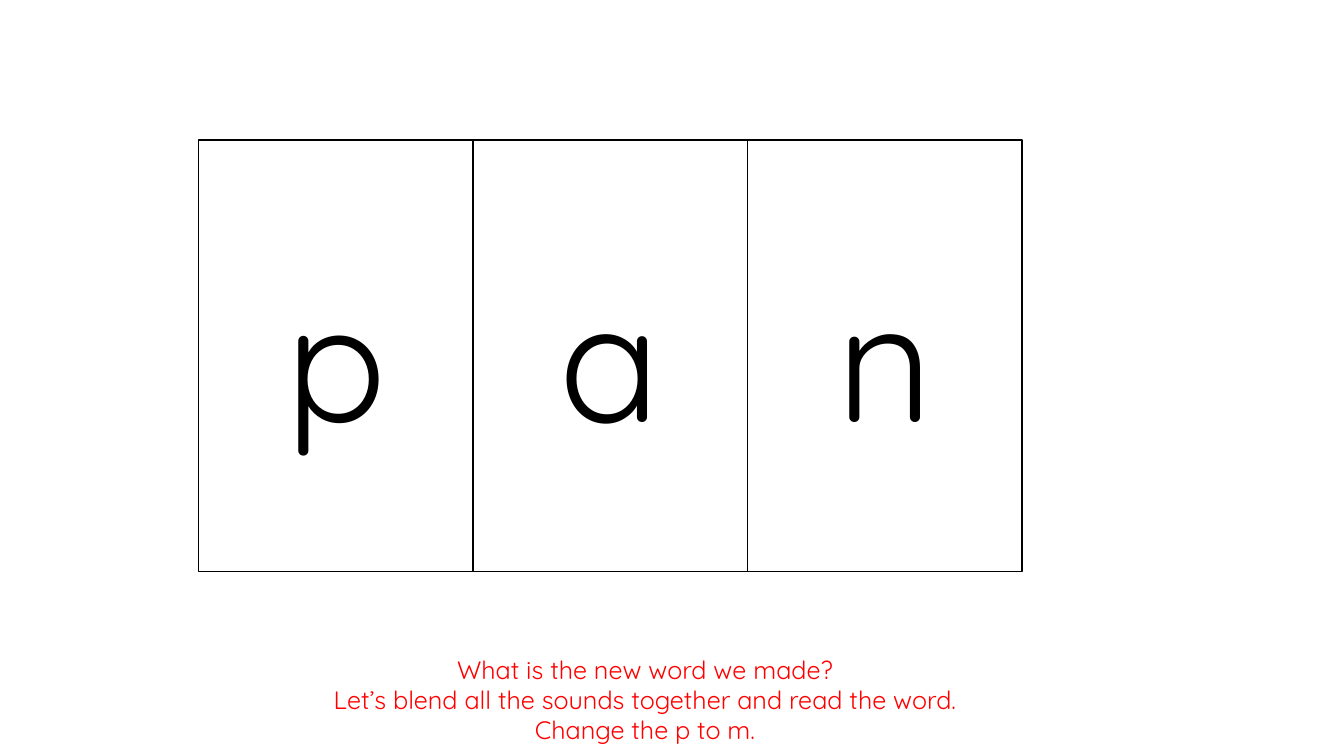
from pptx import Presentation
from pptx.dml.color import RGBColor
from pptx.enum.shapes import MSO_SHAPE
from pptx.enum.text import MSO_ANCHOR, MSO_AUTO_SIZE, PP_ALIGN
from pptx.util import Cm, Pt

COLORS = {"card": "FFFFFF", "ink": "000000", "prompt": "FF0000"}
FONT = "Quicksand"


def add_line(para, text, size, color):
    para.alignment = PP_ALIGN.CENTER
    span = para.add_run()
    span.text = text
    span.font.name = FONT
    span.font.size = Pt(size)
    span.font.color.rgb = RGBColor.from_string(COLORS[color])


deck = Presentation()
deck.slide_width, deck.slide_height = Cm(33.87), Cm(19.05)
page = deck.slides.add_slide(deck.slide_layouts[6])

# Letter cards, side by side
card_left, card_top, card_width, card_height = 5, 3.53, 6.92, 10.87
for index, letter in enumerate("pan"):
    card = page.shapes.add_shape(
        MSO_SHAPE.RECTANGLE,
        Cm(card_left + index * card_width), Cm(card_top),
        Cm(card_width), Cm(card_height),
    )
    card.shadow.inherit = False
    card.fill.solid()
    card.fill.fore_color.rgb = RGBColor.from_string(COLORS["card"])
    card.line.color.rgb = RGBColor.from_string(COLORS["ink"])
    card.line.width = Pt(1)
    card.text_frame.vertical_anchor = MSO_ANCHOR.MIDDLE
    add_line(card.text_frame.paragraphs[0], letter, 120, "ink")

# Teacher prompts
prompts = [
    "What is the new word we made?",
    "Let’s blend all the sounds together and read the word.",
    "Change the p to m.",
]
box = page.shapes.add_textbox(Cm(2.69), Cm(16.36), Cm(27.13), Cm(2.57))
frame = box.text_frame
frame.word_wrap = True
frame.auto_size = MSO_AUTO_SIZE.SHAPE_TO_FIT_TEXT
for index, prompt in enumerate(prompts):
    para = frame.add_paragraph() if index else frame.paragraphs[0]
    add_line(para, prompt, 18, "prompt")

deck.save("out.pptx")
